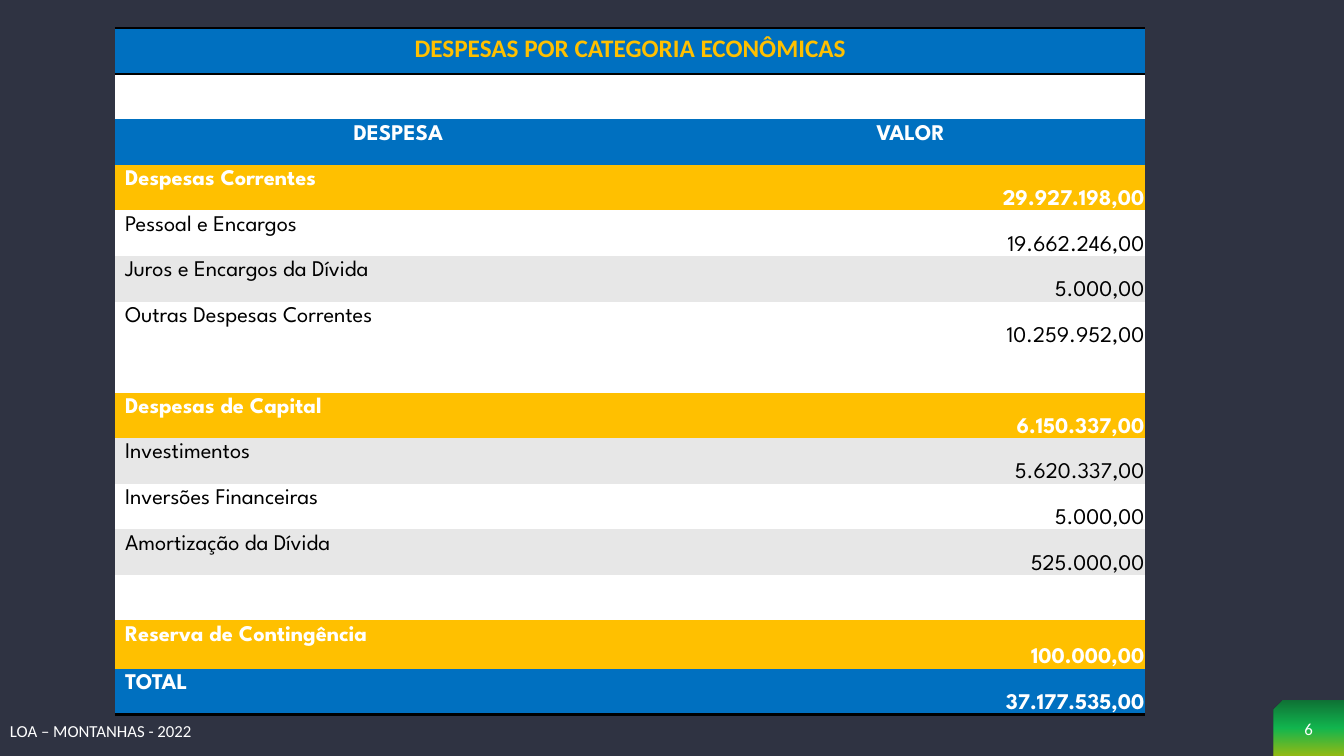
from lxml import etree
from pptx import Presentation, util as u
from pptx.dml.color import RGBColor
from pptx.enum import shapes, text
from pptx.oxml import parse_xml
from pptx.oxml.ns import nsdecls, qn

COLORS = {
    "background": "2F3342", "blue": "0070C0", "gold": "FFC000",
    "white": "FFFFFF", "gray": "E7E7E7", "black": "000000",
    "green_dark": "038B30", "green": "05EE55", "lime": "C0F400",
}
NO_STYLE = "{2D5ABB26-0587-4C30-8999-92F81FD0307C}"
TITLE = "DESPESAS POR CATEGORIA ECONÔMICAS"
ROWS = [
    ("title", TITLE, None),
    ("blank", None, None),
    ("header", "DESPESA", "VALOR "),
    ("group", "Despesas Correntes", "29.927.198,00"),
    ("plain", "Pessoal e Encargos", "19.662.246,00"),
    ("shaded", "Juros e Encargos da Dívida", "5.000,00"),
    ("plain", "Outras Despesas Correntes", "10.259.952,00"),
    ("blank", None, None),
    ("group", "Despesas de Capital", "6.150.337,00"),
    ("shaded", "Investimentos", "5.620.337,00"),
    ("plain", "Inversões Financeiras", "5.000,00"),
    ("shaded", "Amortização da Dívida", "525.000,00"),
    ("blank", None, None),
    ("group", "Reserva de Contingência", "100.000,00"),
    ("total", "TOTAL", "37.177.535,00"),
]
# Row kind: fill, font colour, bold
ROW_STYLES = {
    "title": ("blue", "gold", True),
    "blank": ("white", "black", False),
    "header": ("blue", "white", True),
    "group": ("gold", "white", True),
    "plain": ("white", "black", False),
    "shaded": ("gray", "black", False),
    "total": ("blue", "white", True),
}
BORDERS = {"title": ("lnT", "lnB"), "total": ("lnB",)}


def rgb(name):
    return RGBColor.from_string(COLORS[name])


def line_xml(tag, color, points):
    return parse_xml(
        f'<a:{tag} {nsdecls("a")} w="{int(u.Pt(points))}"><a:solidFill>'
        f'<a:srgbClr val="{COLORS[color]}"/></a:solidFill></a:{tag}>')


def write(frame, content, size, font, color, bold=False,
          align=text.PP_ALIGN.LEFT):
    frame.text = content
    paragraph = frame.paragraphs[0]
    paragraph.alignment = align
    run = paragraph.runs[0]
    run.font.size = u.Pt(size)
    run.font.name = font
    run.font.bold = bold
    run.font.color.rgb = rgb(color)
    return run


def format_cell(cell, kind, content, is_value):
    fill, color, bold = ROW_STYLES[kind]
    cell.fill.solid()
    cell.fill.fore_color.rgb = rgb(fill)
    for index, side in enumerate(BORDERS.get(kind, ())):
        cell.fill._xPr.insert(index, line_xml(side, "black", 2))
    if content is None:
        return
    align = text.PP_ALIGN.LEFT
    if kind in ("title", "header"):
        align = text.PP_ALIGN.CENTER
    elif is_value:
        align = text.PP_ALIGN.RIGHT
        cell.vertical_anchor = text.MSO_ANCHOR.BOTTOM
        cell.margin_left = cell.margin_right = cell.margin_top = u.Inches(0.01)
        cell.margin_bottom = 0
    size, font = (18, "Calibri") if kind == "title" else (16, "League Spartan")
    run = write(cell.text_frame, content, size, font, color, bold, align)
    if kind == "title":
        run.font._element.insert(0, line_xml("ln", "white", 0.75))


def add_expense_table(slide, left, top, width, height):
    frame = slide.shapes.add_table(len(ROWS), 2, left, top, width, height)
    table = frame.table
    properties = table._tbl.tblPr
    properties.find(qn("a:tableStyleId")).text = NO_STYLE
    table.first_row = table.horz_banding = False
    table.columns[0].width = int(width * 0.55)
    table.columns[1].width = width - table.columns[0].width
    for index, (kind, label, value) in enumerate(ROWS):
        table.rows[index].height = u.Inches(0.48 if label == "Reserva de Contingência" else 0.452)
        for column, content in enumerate((label, value)):
            format_cell(table.cell(index, column), kind, content, column == 1)
        if value is None:
            table.cell(index, 0).merge(table.cell(index, 1))


def add_page_number(slide, left, top, width, height):
    tab = slide.shapes.add_shape(
        shapes.MSO_SHAPE.SNIP_1_RECTANGLE, left, top, width, height)
    tab.shadow.inherit = False
    tab.line.fill.background()
    tab._element.spPr.find(qn("a:xfrm")).set("flipH", "1")
    tab.fill.gradient()
    tab.fill.gradient_angle = 270
    stops = tab.fill._xPr.find(qn("a:gradFill")).find(qn("a:gsLst"))
    for stop in list(stops):
        stops.remove(stop)
    for position, color in enumerate(("green_dark", "green", "lime")):
        stop = etree.SubElement(stops, qn("a:gs"), pos=str(position * 50000))
        tone = etree.SubElement(stop, qn("a:srgbClr"), val=COLORS[color])
        etree.SubElement(tone, qn("a:alpha"), val="70000")

    box = slide.shapes.add_textbox(left, top + u.Inches(0.06), width, u.Inches(0.45))
    box.text_frame.word_wrap = True
    box.text_frame.vertical_anchor = text.MSO_ANCHOR.MIDDLE
    write(box.text_frame, "6", 12, "Calibri", "white",
          align=text.PP_ALIGN.CENTER)


def add_footer(slide, left, top, width, height):
    box = slide.shapes.add_textbox(left, top, width, height)
    box.text_frame.word_wrap = True
    write(box.text_frame, "LOA – MONTANHAS - 2022", 12, "Calibri", "white")


def main():
    presentation = Presentation()
    presentation.slide_width = u.Inches(13.33)
    presentation.slide_height = u.Inches(7.5)
    slide = presentation.slides.add_slide(presentation.slide_layouts[6])
    slide.background.fill.solid()
    slide.background.fill.fore_color.rgb = rgb("background")
    slide_width, slide_height = presentation.slide_width, presentation.slide_height

    add_expense_table(slide, u.Inches(1.14), u.Inches(0.28),
                      u.Inches(10.22), u.Inches(6.81))
    tab_width, tab_height = u.Inches(0.7), u.Inches(0.55)
    add_page_number(slide, slide_width - tab_width, slide_height - tab_height,
                    tab_width, tab_height)
    add_footer(slide, 0, u.Inches(7.1), slide_width // 2, u.Inches(0.3))
    presentation.save("out.pptx")


if __name__ == "__main__":
    main()
